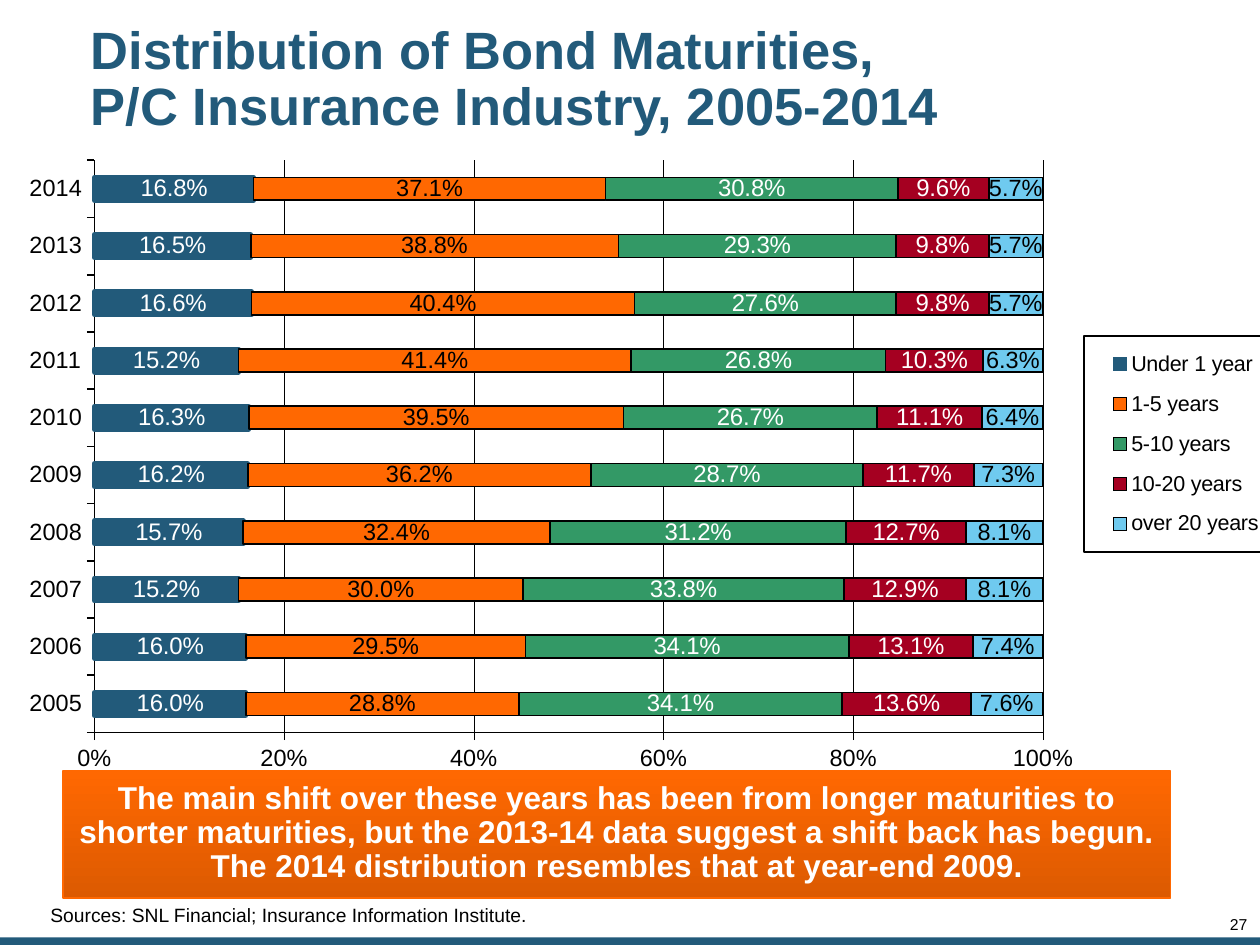
from dataclasses import dataclass
from typing import Any

import pptx
import pptx.chart.data
import pptx.dml.color
import pptx.enum.chart
import pptx.enum.shapes
import pptx.enum.text
import pptx.oxml
import pptx.oxml.ns
import pptx.util

Inches = pptx.util.Inches
Pt = pptx.util.Pt
ALIGN = pptx.enum.text.PP_ALIGN
ANCHOR = pptx.enum.text.MSO_ANCHOR
TICK = pptx.enum.chart.XL_TICK_MARK

NAVY, ORANGE, DARK_ORANGE = "225A7A", "FF6801", "DC5A01"
BLACK, WHITE = "000000", "FFFFFF"
NAMESPACES = pptx.oxml.ns.nsdecls("c", "a")


@dataclass
class Maturity:
    name: str
    percents: list[float]
    fill: str
    label: str
    label_size: float
    outline: str = BLACK
    outline_width: float = 0.96


@dataclass
class Wording:
    lines: list[str]
    size: float
    colour: str
    bold: bool
    margins: tuple[float, float, float, float]
    anchor: Any
    paragraph: dict[str, Any]


YEARS = [str(year) for year in range(2005, 2015)]
MATURITIES = [
    Maturity("Under 1 year", [16, 16, 15.2, 15.7, 16.2, 16.3, 15.2, 16.6, 16.5, 16.8],
             NAVY, WHITE, 13.7, NAVY, 2.87),
    Maturity("1-5 years", [28.8, 29.5, 30, 32.4, 36.2, 39.5, 41.4, 40.4, 38.8, 37.1],
             ORANGE, BLACK, 13.4),
    Maturity("5-10 years", [34.1, 34.1, 33.8, 31.2, 28.7, 26.7, 26.8, 27.6, 29.3, 30.8],
             "339966", WHITE, 13.7),
    Maturity("10-20 years", [13.6, 13.1, 12.9, 12.7, 11.7, 11.1, 10.3, 9.8, 9.8, 9.6],
             "A50021", WHITE, 13.7),
    Maturity("over 20 years", [7.6, 7.4, 8.1, 8.1, 7.3, 6.4, 6.3, 5.7, 5.7, 5.7],
             "6FCAEF", BLACK, 13.4),
]


def rgb(colour: str) -> pptx.dml.color.RGBColor:
    return pptx.dml.color.RGBColor.from_string(colour)


def apply(target: Any, values: dict[str, Any]) -> None:
    for attribute, value in values.items():
        setattr(target, attribute, value)


def style_font(font: Any, size: float, colour: str, bold: bool = False) -> None:
    apply(font, {"name": "Arial", "size": Pt(size), "bold": bold})
    font.color.rgb = rgb(colour)


def style_line(line: Any, colour: str, width: float) -> None:
    line.color.rgb = rgb(colour)
    line.width = Pt(width)


def write(shape: Any, wording: Wording) -> None:
    left, top, right, bottom = map(Inches, wording.margins)
    frame = shape.text_frame
    apply(frame, {"word_wrap": True, "vertical_anchor": wording.anchor,
                  "margin_left": left, "margin_top": top,
                  "margin_right": right, "margin_bottom": bottom})
    paragraph = frame.paragraphs[0]
    apply(paragraph, wording.paragraph)
    for index, line in enumerate(wording.lines):
        if index:
            paragraph.add_line_break()
        run = paragraph.add_run()
        run.text = line
        style_font(run.font, wording.size, wording.colour, wording.bold)


def add_text(slide: Any, box: tuple[float, ...], wording: Wording) -> None:
    write(slide.shapes.add_textbox(*map(Inches, box)), wording)


def add_rectangle(slide: Any, box: tuple[float, ...]) -> Any:
    rectangle = slide.shapes.add_shape(
        pptx.enum.shapes.MSO_SHAPE.RECTANGLE, *map(Inches, box))
    rectangle.shadow.inherit = False
    return rectangle


def manual_layout(box: tuple[float, ...], inner: bool = False) -> Any:
    target = '<c:layoutTarget val="inner"/>' if inner else ""
    modes = "".join(f'<c:{edge}Mode val="edge"/>' for edge in "xy")
    places = "".join(f'<c:{key} val="{value}"/>' for key, value in zip("xywh", box))
    return pptx.oxml.parse_xml(
        f"<c:layout {NAMESPACES}><c:manualLayout>{target}{modes}{places}"
        "</c:manualLayout></c:layout>")


def place_parts(chart: Any) -> None:
    plot_area = chart.element.xpath("c:chart/c:plotArea")[0]
    legend = chart.element.xpath("c:chart/c:legend")[0]
    for part in (plot_area, legend):
        for layout in part.xpath("c:layout"):
            part.remove(layout)
    plot_area.insert(0, manual_layout((0.065, 0.037, 0.743, 0.793), inner=True))
    legend.xpath("c:legendPos")[0].addnext(manual_layout((0.84, 0.28, 0.16, 0.3)))
    legend.xpath("c:txPr")[0].addprevious(pptx.oxml.parse_xml(
        f'<c:spPr {NAMESPACES}><a:ln w="12700"><a:solidFill>'
        f'<a:srgbClr val="{BLACK}"/></a:solidFill></a:ln></c:spPr>'))


def add_maturity_chart(slide: Any) -> None:
    data = pptx.chart.data.CategoryChartData(number_format="0.0%")
    data.categories = YEARS
    for maturity in MATURITIES:
        data.add_series(maturity.name, [round(p / 100, 3) for p in maturity.percents])
    chart = slide.shapes.add_chart(
        pptx.enum.chart.XL_CHART_TYPE.BAR_STACKED_100,
        *map(Inches, (0.09, 1.06, 10.14, 5.73)), data).chart
    apply(chart, {"has_title": False, "has_legend": True})
    style_font(chart.font, 13.4, BLACK)
    apply(chart.legend, {"position": pptx.enum.chart.XL_LEGEND_POSITION.RIGHT,
                         "include_in_layout": False})
    style_font(chart.legend.font, 12.3, BLACK)

    years, shares = chart.category_axis, chart.value_axis
    for axis, width in ((years, 0.96), (shares, 0.25)):
        apply(axis, {"major_tick_mark": TICK.OUTSIDE, "minor_tick_mark": TICK.NONE})
        style_font(axis.tick_labels.font, 13.4, BLACK)
        style_line(axis.format.line, BLACK, width)
    years.has_major_gridlines = False
    apply(shares, {"minimum_scale": 0, "maximum_scale": 1, "major_unit": 0.2,
                   "has_major_gridlines": True})
    style_line(shares.major_gridlines.format.line, BLACK, 0.25)
    apply(shares.tick_labels, {"number_format": "0%", "number_format_is_linked": False})

    plot = chart.plots[0]
    apply(plot, {"gap_width": 150, "overlap": 100, "vary_by_categories": False})
    for series, maturity in zip(plot.series, MATURITIES):
        series.format.fill.solid()
        series.format.fill.fore_color.rgb = rgb(maturity.fill)
        style_line(series.format.line, maturity.outline, maturity.outline_width)
        apply(series.data_labels, {
            "show_value": True, "number_format": "0.0%",
            "number_format_is_linked": False,
            "position": pptx.enum.chart.XL_LABEL_POSITION.CENTER})
        style_font(series.data_labels.font, maturity.label_size, maturity.label)
    place_parts(chart)


def add_takeaway(slide: Any) -> None:
    takeaway = add_rectangle(slide, (0.5, 6.12, 8.79, 1.01))
    takeaway.fill.gradient()
    takeaway.fill.gradient_angle = 270
    for stop, colour in zip(takeaway.fill.gradient_stops, (ORANGE, DARK_ORANGE)):
        stop.color.rgb = rgb(colour)
    style_line(takeaway.line, ORANGE, 1)
    write(takeaway, Wording(
        ["The main shift over these years has been from longer maturities to "
         "shorter maturities, but the 2013-14 data suggest a shift back has begun. "
         "The 2014 distribution resembles that at year-end 2009."],
        18, WHITE, True, (0.1, 0.05, 0.1, 0.07), ANCHOR.MIDDLE,
        {"alignment": ALIGN.CENTER, "line_spacing": 0.9}))


def main() -> None:
    deck = pptx.Presentation()
    apply(deck, {"slide_width": Inches(10), "slide_height": Inches(7.5)})
    slide = deck.slides.add_slide(deck.slide_layouts[6])

    footer = add_rectangle(slide, (0, 7.44, 10, 0.06))
    footer.fill.solid()
    footer.fill.fore_color.rgb = rgb(NAVY)
    footer.line.fill.background()
    add_text(slide, (9.41, 7.28, 0.49, 0.13), Wording(
        ["27"], 9, BLACK, False, (0, 0, 0, 0), ANCHOR.TOP,
        {"alignment": ALIGN.RIGHT, "line_spacing": 0.85}))
    add_text(slide, (0.67, 0.17, 7.73, 0.94), Wording(
        ["Distribution of Bond Maturities,", "P/C Insurance Industry, 2005-2014"],
        30, NAVY, True, (0.05, 0.05, 0.05, 0.05), ANCHOR.MIDDLE,
        {"line_spacing": 0.9}))
    add_maturity_chart(slide)
    add_text(slide, (0, 6.99, 8.88, 0.51), Wording(
        ["Sources: SNL Financial; Insurance Information Institute."],
        11, BLACK, False, (0.4, 0, 0, 0.15), ANCHOR.BOTTOM, {"line_spacing": 0.85}))
    add_takeaway(slide)
    deck.save("out.pptx")


if __name__ == "__main__":
    main()
